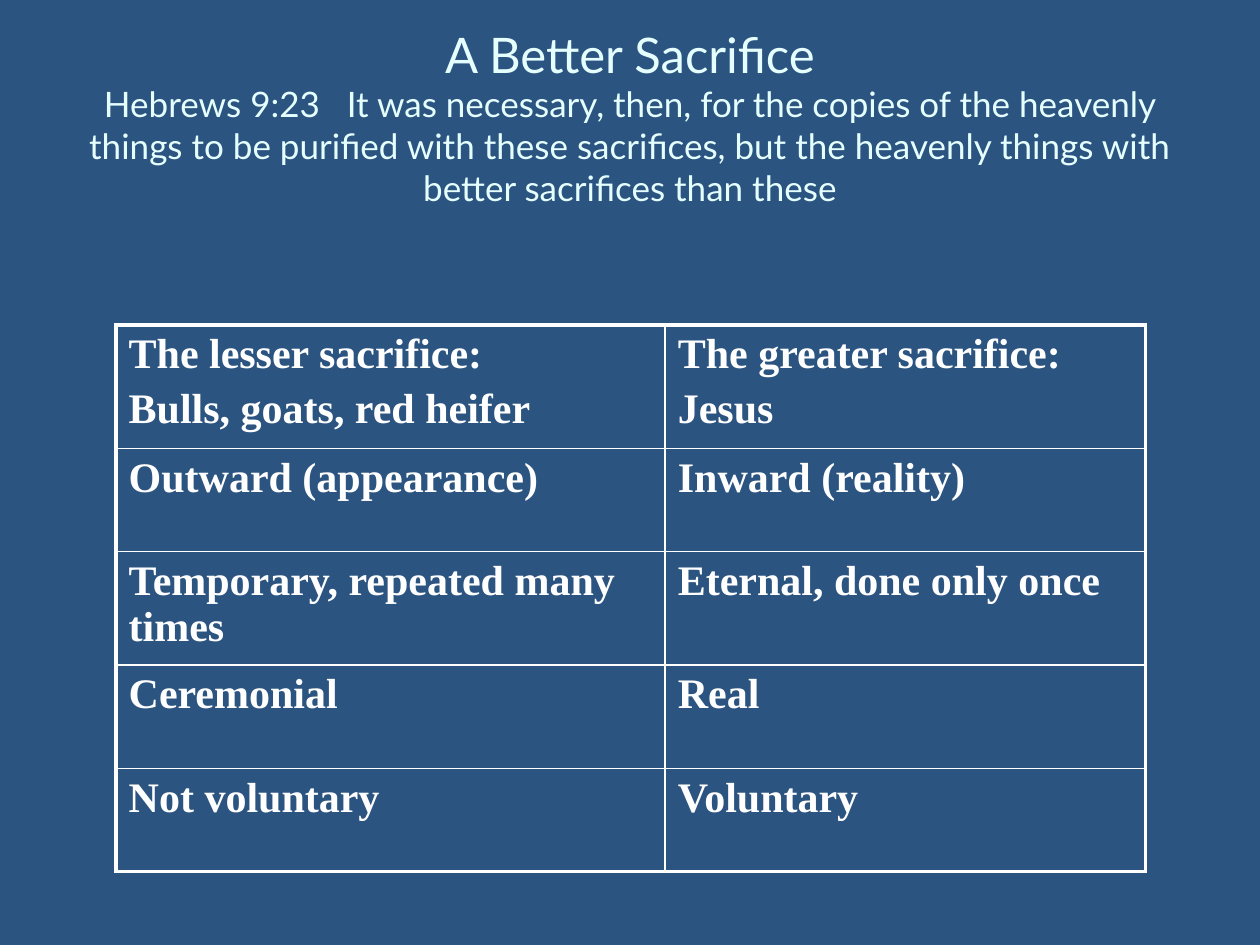
from lxml.etree import SubElement
from pptx import Presentation
from pptx.dml.color import RGBColor
from pptx.enum.text import MSO_ANCHOR, PP_ALIGN
from pptx.oxml.ns import qn
from pptx.util import Cm, Pt

COLORS = {"background": "2B5481", "title": "E5FFFF", "table": "FFFFFF"}
TITLE = "A Better Sacrifice"
VERSE = (
    "Hebrews 9:23   It was necessary, then, for the copies of the heavenly "
    "things to be purified with these sacrifices, but the heavenly things "
    "with better sacrifices than these"
)
COMPARISON = [
    ("The lesser sacrifice:\nBulls, goats, red heifer", "The greater sacrifice:\nJesus"),
    ("Outward (appearance)", "Inward (reality)"),
    ("Temporary, repeated many times", "Eternal, done only once"),
    ("Ceremonial", "Real"),
    ("Not voluntary", "Voluntary"),
]
COLUMN_WIDTHS = [11.07, 9.68]
ROW_HEIGHTS = [2.49, 2.08, 2.29, 2.08, 2.08]
OUTER_LINE, INNER_LINE = Pt(2.25), Pt(1)


def style_font(font, name, size, color):
    font.name = name
    font.size = Pt(size)
    font.color.rgb = RGBColor.from_string(COLORS[color])


def add_title(page):
    box = page.shapes.add_textbox(Cm(1.27), Cm(0.76), Cm(22.86), Cm(3.18))
    frame = box.text_frame
    frame.word_wrap = True
    frame.vertical_anchor = MSO_ANCHOR.MIDDLE
    para = frame.paragraphs[0]
    para.alignment = PP_ALIGN.CENTER
    heading = para.add_run()
    heading.text = TITLE
    style_font(heading.font, "Lato", 28, "title")
    para.add_line_break()
    verse = para.add_run()
    verse.text = VERSE
    style_font(verse.font, "Lato", 20, "title")


def add_border(cell, side, width):
    properties = cell._tc.get_or_add_tcPr()
    line = SubElement(properties, qn(f"a:ln{side}"), w=str(width))
    fill = SubElement(line, qn("a:solidFill"))
    SubElement(fill, qn("a:srgbClr"), val=COLORS["table"])


def fill_cell(cell, text, outer_sides):
    cell.text = text
    for index, para in enumerate(cell.text_frame.paragraphs):
        if index:
            para.space_before = Pt(4.8)
        style_font(para.font, "Times New Roman", 24, "table")
        para.font.bold = True
    for side in "LRTB":
        add_border(cell, side, OUTER_LINE if side in outer_sides else INNER_LINE)
    cell.fill.background()


def add_comparison(page):
    rows, columns = len(ROW_HEIGHTS), len(COLUMN_WIDTHS)
    table = page.shapes.add_table(
        rows, columns, Cm(2.34), Cm(6.55), Cm(sum(COLUMN_WIDTHS)), Cm(sum(ROW_HEIGHTS))
    ).table
    table.first_row = False
    table.horz_banding = False
    for column, width in zip(table.columns, COLUMN_WIDTHS):
        column.width = Cm(width)
    for row, height in zip(table.rows, ROW_HEIGHTS):
        row.height = Cm(height)
    for r, texts in enumerate(COMPARISON):
        for c, text in enumerate(texts):
            edges = {"L": c == 0, "R": c == columns - 1, "T": r == 0, "B": r == rows - 1}
            outer_sides = [side for side, outer in edges.items() if outer]
            fill_cell(table.cell(r, c), text, outer_sides)


def main():
    deck = Presentation()
    deck.slide_width, deck.slide_height = Cm(25.4), Cm(19.05)
    page = deck.slides.add_slide(deck.slide_layouts[6])
    background = page.background.fill
    background.solid()
    background.fore_color.rgb = RGBColor.from_string(COLORS["background"])
    add_title(page)
    add_comparison(page)
    deck.save("out.pptx")


if __name__ == "__main__":
    main()
